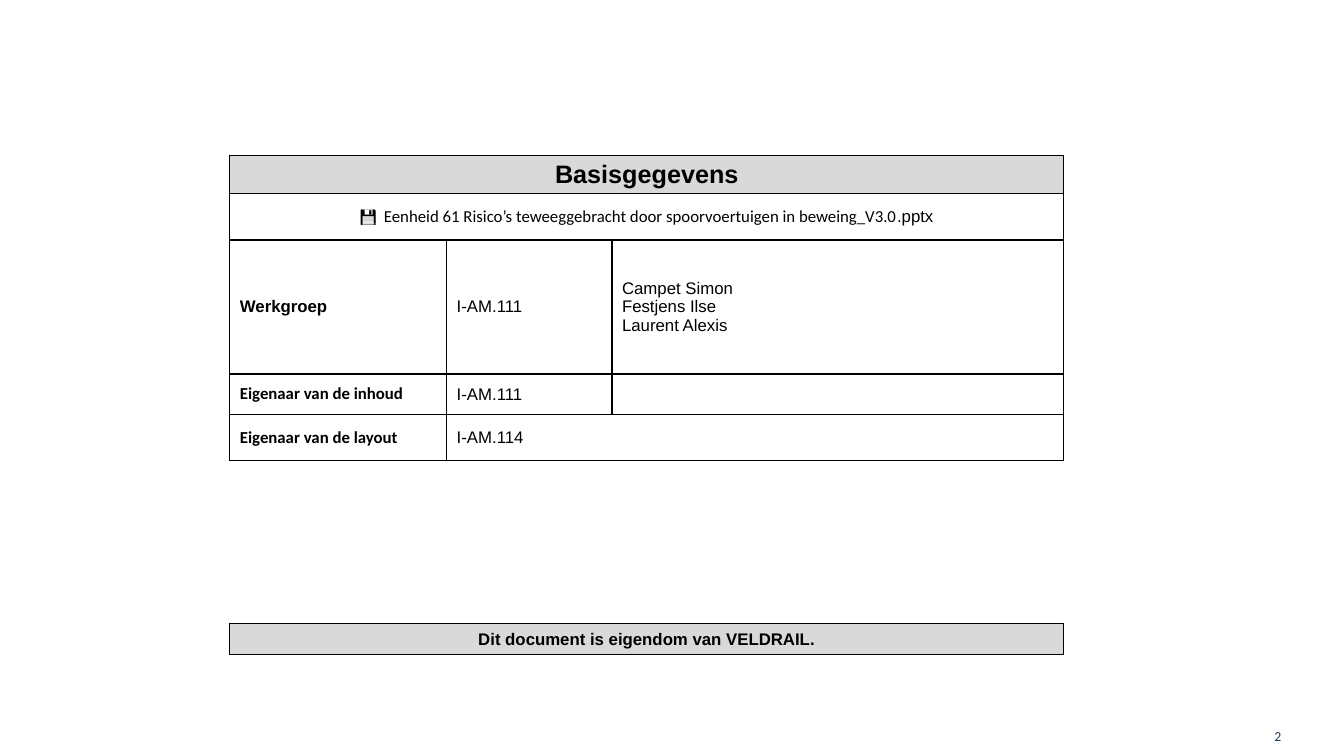
import pptx
import pptx.util
import pptx.dml.color
import pptx.enum.shapes
import pptx.enum.text
import pptx.oxml
import pptx.oxml.ns

COLORS = {"ink": "000000", "band": "D9D9D9", "number": "213A53"}
COLS = [2.15, 1.64, 4.48]
ROWS = [0.38, 0.46, 1.33, 0.4, 0.46]
LEFT, TOP = 2.28, 1.54
WIDTH = sum(COLS)

CELLS = [
    (0, 0, 3, "c", [[("Basisgegevens", "Arial", 18, True)]]),
    (1, 0, 3, "c", [[
        ("💾  ", "Calibri", 12, False),
        ("Eenheid 61 Risico’s teweeggebracht door spoorvoertuigen in beweing_V3.0", "Calibri", 12, False),
        (".pptx", "Arial", 12, False),
    ]]),
    (2, 0, 1, "l", [[("Werkgroep", "Arial", 12, True)]]),
    (2, 1, 1, "l", [[("I-AM.111", "Arial", 12, False)]]),
    (2, 2, 1, "l", [
        [("Campet Simon", "Arial", 12, False)],
        [("Festjens Ilse", "Arial", 12, False)],
        [("Laurent Alexis", "Arial", 12, False)],
    ]),
    (3, 0, 1, "l", [[("Eigenaar van de inhoud", "Calibri", 12, True)]]),
    (3, 1, 1, "l", [[("I-AM.111", "Arial", 12, False)]]),
    (4, 0, 1, "l", [[("Eigenaar van de layout", "Calibri", 12, True)]]),
    (4, 1, 2, "l", [[("I-AM.114", "Arial", 12, False)]]),
]
OWNER = [[("Dit document is eigendom van VELDRAIL.", "Arial", 12, True)]]
PAGE = [[("2", "Calibri", 9.8, False)]]

ALIGN = {"l": pptx.enum.text.PP_ALIGN.LEFT, "c": pptx.enum.text.PP_ALIGN.CENTER}
MIDDLE = pptx.enum.text.MSO_ANCHOR.MIDDLE
inch = pptx.util.Inches


def rgb(name):
    return pptx.dml.color.RGBColor.from_string(COLORS[name])


def write(tf, paragraphs, align, color="ink"):
    for i, runs in enumerate(paragraphs):
        p = tf.add_paragraph() if i else tf.paragraphs[0]
        p.alignment = ALIGN[align]
        for text, font, size, bold in runs:
            r = p.add_run()
            r.text = text
            r.font.name = font
            r.font.size = pptx.util.Pt(size)
            r.font.bold = bold
            r.font.color.rgb = rgb(color)


def add_borders(cell):
    tcPr = cell._tc.get_or_add_tcPr()
    for i, side in enumerate(("lnL", "lnR", "lnT", "lnB")):
        tcPr.insert(i, pptx.oxml.parse_xml(
            f'<a:{side} {pptx.oxml.ns.nsdecls("a")} w="12700"><a:solidFill>'
            f'<a:srgbClr val="{COLORS["ink"]}"/></a:solidFill></a:{side}>'))


def add_table(slide):
    table = slide.shapes.add_table(
        len(ROWS), len(COLS), inch(LEFT), inch(TOP), inch(WIDTH), inch(sum(ROWS))).table
    table.first_row = table.horz_banding = False
    for col, width in zip(table.columns, COLS):
        col.width = inch(width)
    for row, height in zip(table.rows, ROWS):
        row.height = inch(height)
    for row, col, span, align, paragraphs in CELLS:
        cell = table.cell(row, col)
        if span > 1:
            cell.merge(table.cell(row, col + span - 1))
        write(cell.text_frame, paragraphs, align)
    for i, row in enumerate(table.rows):
        for cell in row.cells:
            cell.vertical_anchor = MIDDLE
            if i == 0:
                cell.fill.solid()
                cell.fill.fore_color.rgb = rgb("band")
            else:
                cell.fill.background()
            if not cell.text_frame.text:
                cell.text_frame.paragraphs[0].font.size = pptx.util.Pt(12)
            add_borders(cell)


def add_owner_bar(slide):
    sp = slide.shapes.add_shape(
        pptx.enum.shapes.MSO_SHAPE.RECTANGLE, inch(LEFT), inch(6.19), inch(WIDTH), inch(0.3))
    sp.shadow.inherit = False
    sp.fill.solid()
    sp.fill.fore_color.rgb = rgb("band")
    sp.line.color.rgb = rgb("ink")
    sp.line.width = pptx.util.Pt(0.75)
    sp.text_frame.word_wrap = True
    sp.text_frame.vertical_anchor = MIDDLE
    write(sp.text_frame, OWNER, "c")


def add_page_number(slide):
    tf = slide.shapes.add_textbox(inch(12.54), inch(7.1), inch(0.62), inch(0.4)).text_frame
    tf.word_wrap = True
    tf.vertical_anchor = MIDDLE
    write(tf, PAGE, "l", "number")


def main():
    prs = pptx.Presentation()
    prs.slide_width, prs.slide_height = inch(13.33), inch(7.5)
    slide = prs.slides.add_slide(prs.slide_layouts[6])
    add_table(slide)
    add_page_number(slide)
    add_owner_bar(slide)
    prs.save("out.pptx")


if __name__ == "__main__":
    main()
